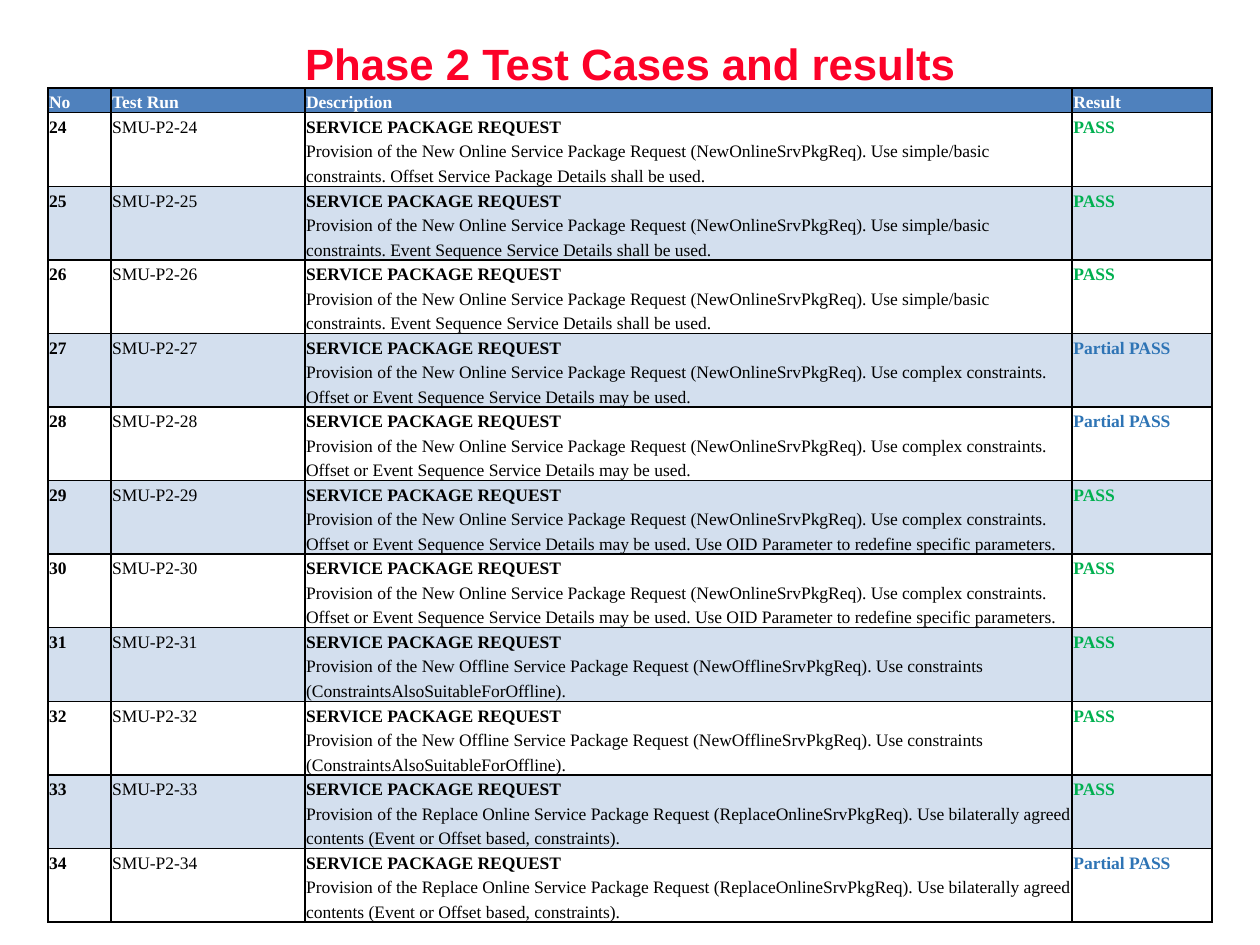
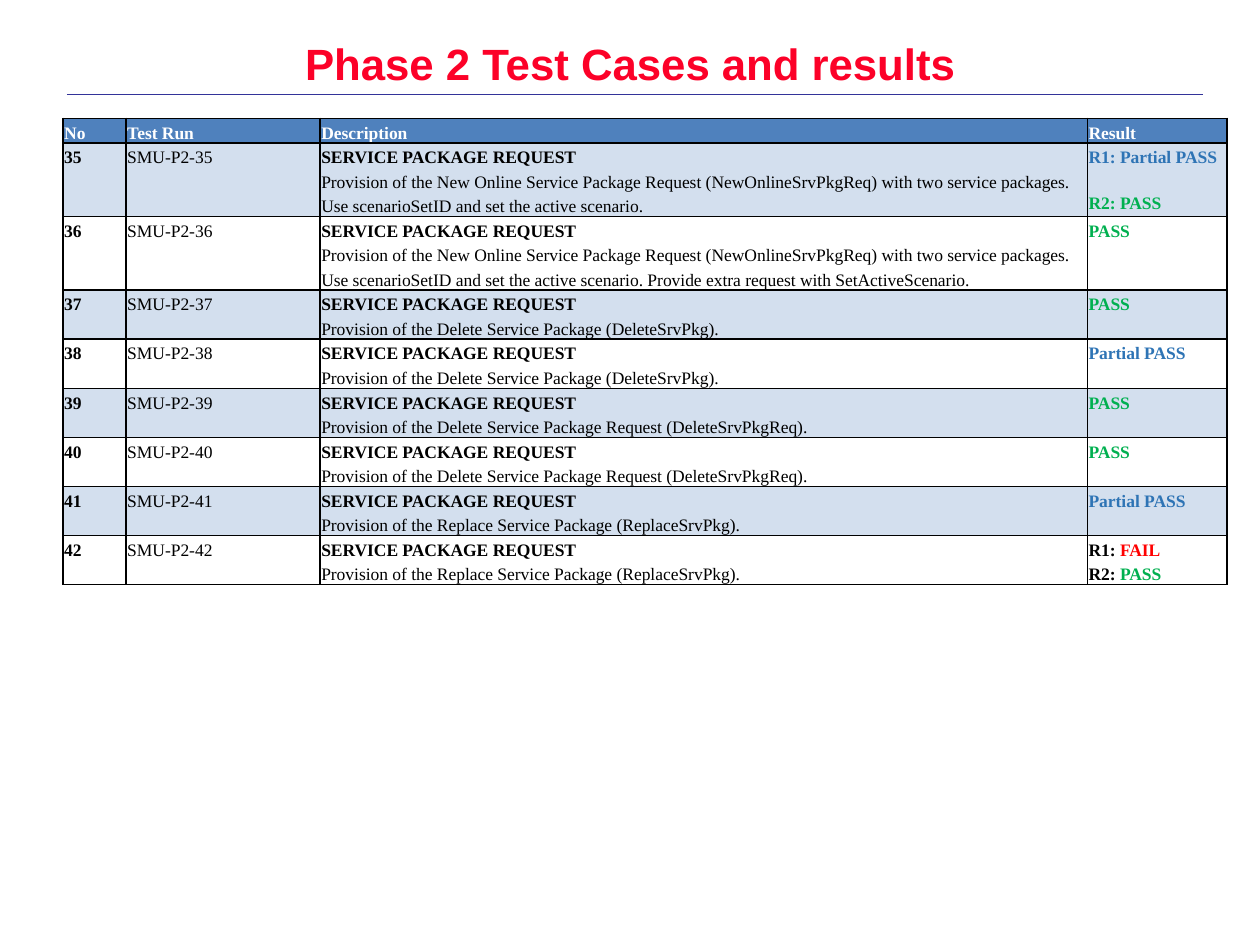
from pptx import Presentation
from pptx.dml.color import RGBColor
from pptx.enum.shapes import MSO_CONNECTOR
from pptx.enum.text import MSO_ANCHOR, PP_ALIGN
from pptx.oxml import parse_xml
from pptx.oxml.ns import nsdecls, qn
from pptx.util import Inches, Pt

COLOURS = {
    "title": "FC0128", "rule": "333399", "header": "4F81BD", "band": "D3DFEE",
    "white": "FFFFFF", "black": "000000",
    "pass": "00B050", "partial": "2E74B5", "fail": "FF0000",
}
TITLE = "Phase 2 Test Cases and results"
HEADERS = ["No", "Test Run", "Description", "Result"]
COLUMN_WIDTHS = [0.5, 1.54, 6.09, 1.11]
LINE_HEIGHT = Pt(14)
WRAP_LENGTH = 100  # longer descriptions take two lines

# A result is a list of paragraphs, each a list of (text, colour) runs
PASS = [[("PASS", "pass")]]
PARTIAL = [[("Partial PASS", "partial")]]
PARTIAL_THEN_PASS = [[("R1: Partial PASS", "partial")], [("R2: PASS", "pass")]]
FAIL_THEN_PASS = [[("R1: ", "black"), ("FAIL\n", "fail"), ("R2: ", "black"), ("PASS", "pass")]]

NEW_ONLINE = "Provision of the New Online Service Package Request (NewOnlineSrvPkgReq)"
SIMPLE = NEW_ONLINE + ". Use simple/basic constraints. "
SIMPLE_OFFSET = SIMPLE + "Offset Service Package Details shall be used."
SIMPLE_EVENT = SIMPLE + "Event Sequence Service Details shall be used."
COMPLEX = NEW_ONLINE + (". Use complex constraints. "
                        "Offset or Event Sequence Service Details may be used.")
COMPLEX_OID = COMPLEX + " Use OID Parameter to redefine specific parameters."
OFFLINE = ("Provision of the New Offline Service Package Request (NewOfflineSrvPkgReq). "
           "Use constraints (ConstraintsAlsoSuitableForOffline).")
REPLACE_ONLINE = ("Provision of the Replace Online Service Package Request "
                  "(ReplaceOnlineSrvPkgReq). Use bilaterally agreed contents "
                  "(Event or Offset based, constraints).")
SCENARIO = NEW_ONLINE + (" with two service packages. "
                         "Use scenarioSetID and set the active scenario.")
SCENARIO_EXTRA = SCENARIO + " Provide extra request with SetActiveScenario."
DELETE = "Provision of the Delete Service Package (DeleteSrvPkg)."
DELETE_REQUEST = "Provision of the Delete Service Package Request (DeleteSrvPkgReq)."
REPLACE = "Provision of the Replace Service Package (ReplaceSrvPkg)."

PAGES = [
    {"left": 0.38, "top": 0.7, "first_number": 24, "first_band": 1, "cases": [
        (SIMPLE_OFFSET, PASS), (SIMPLE_EVENT, PASS), (SIMPLE_EVENT, PASS),
        (COMPLEX, PARTIAL), (COMPLEX, PARTIAL),
        (COMPLEX_OID, PASS), (COMPLEX_OID, PASS),
        (OFFLINE, PASS), (OFFLINE, PASS),
        (REPLACE_ONLINE, PASS), (REPLACE_ONLINE, PARTIAL)]},
    {"left": 0.5, "top": 0.94, "first_number": 35, "first_band": 0, "cases": [
        (SCENARIO, PARTIAL_THEN_PASS), (SCENARIO_EXTRA, PASS),
        (DELETE, PASS), (DELETE, PARTIAL),
        (DELETE_REQUEST, PASS), (DELETE_REQUEST, PASS),
        (REPLACE, PARTIAL), (REPLACE, FAIL_THEN_PASS)]},
]


def write(paragraph, text, colour="black", bold=True, size=10, font="Times New Roman"):
    """Add text to a paragraph, with a line break at each newline."""
    for index, line in enumerate(text.split("\n")):
        if index:
            paragraph.add_line_break()
        if line:
            run = paragraph.add_run()
            run.text = line
            run.font.name = font
            run.font.size = Pt(size)
            run.font.bold = bold
            run.font.color.rgb = RGBColor.from_string(COLOURS[colour])


def fill_cell(cell, paragraphs, fill=None, align=PP_ALIGN.JUSTIFY):
    """Format a cell and write paragraphs of (text, colour[, bold]) runs."""
    cell.margin_left = cell.margin_right = Inches(0.01)
    cell.margin_top = cell.margin_bottom = 0
    properties = cell._tc.get_or_add_tcPr()
    for side in ("lnL", "lnR", "lnT", "lnB"):
        properties.append(parse_xml(
            f'<a:{side} {nsdecls("a")} w="{Pt(1)}"><a:solidFill>'
            f'<a:srgbClr val="{COLOURS["black"]}"/></a:solidFill></a:{side}>'))
    if fill:
        cell.fill.solid()
        cell.fill.fore_color.rgb = RGBColor.from_string(COLOURS[fill])
    else:
        cell.fill.background()
    for index, runs in enumerate(paragraphs):
        frame = cell.text_frame
        paragraph = frame.add_paragraph() if index else frame.paragraphs[0]
        paragraph.alignment = align
        paragraph.line_spacing = LINE_HEIGHT
        if index:
            paragraph.space_before = Pt(12)
        for run in runs:
            write(paragraph, *run)


presentation = Presentation()
presentation.slide_width = Inches(10)
presentation.slide_height = Inches(7.5)

for page in PAGES:
    slide = presentation.slides.add_slide(presentation.slide_layouts[6])

    title_rule = slide.shapes.add_connector(
        MSO_CONNECTOR.STRAIGHT, Inches(0.53), Inches(0.75), Inches(9.55), Inches(0.75))
    title_rule.line.color.rgb = RGBColor.from_string(COLOURS["rule"])
    title_rule.line.width = Pt(0.13)
    title_properties = title_rule._element.spPr
    title_properties.append(title_properties.makeelement(qn("a:effectLst"), {}))

    title = slide.shapes.add_textbox(Inches(0.5), Inches(0.3), Inches(9), Inches(0.45)).text_frame
    title.word_wrap = True
    title.vertical_anchor = MSO_ANCHOR.MIDDLE
    title.paragraphs[0].alignment = PP_ALIGN.CENTER
    title.paragraphs[0].line_spacing = 0.9
    write(title.paragraphs[0], TITLE, colour="title", size=25, font="Arial")

    cases = page["cases"]
    line_counts = [1] + [3 if len(text) > WRAP_LENGTH else 2 for text, _ in cases]
    results_table = slide.shapes.add_table(
        len(line_counts), len(HEADERS), Inches(page["left"]), Inches(page["top"]),
        Inches(sum(COLUMN_WIDTHS)), LINE_HEIGHT * sum(line_counts)).table
    results_table.horz_banding = False
    for column, width in zip(results_table.columns, COLUMN_WIDTHS):
        column.width = Inches(width)
    for row, line_count in zip(results_table.rows, line_counts):
        row.height = LINE_HEIGHT * line_count

    aligns = [PP_ALIGN.JUSTIFY, PP_ALIGN.JUSTIFY, PP_ALIGN.LEFT, PP_ALIGN.JUSTIFY]
    for column, header in enumerate(HEADERS):
        fill_cell(results_table.cell(0, column), [[(header, "white")]], "header", aligns[column])

    for index, (description, result) in enumerate(cases):
        number = page["first_number"] + index
        contents = [
            [[(str(number), "black")]],
            [[(f"SMU-P2-{number}", "black", False)]],
            [[("SERVICE PACKAGE REQUEST\n", "black"), (description, "black", False)]],
            result,
        ]
        band = "band" if index % 2 == page["first_band"] else None
        for column, paragraphs in enumerate(contents):
            align = PP_ALIGN.LEFT if result is FAIL_THEN_PASS else aligns[column]
            fill_cell(results_table.cell(index + 1, column), paragraphs, band, align)

presentation.save("out.pptx")
